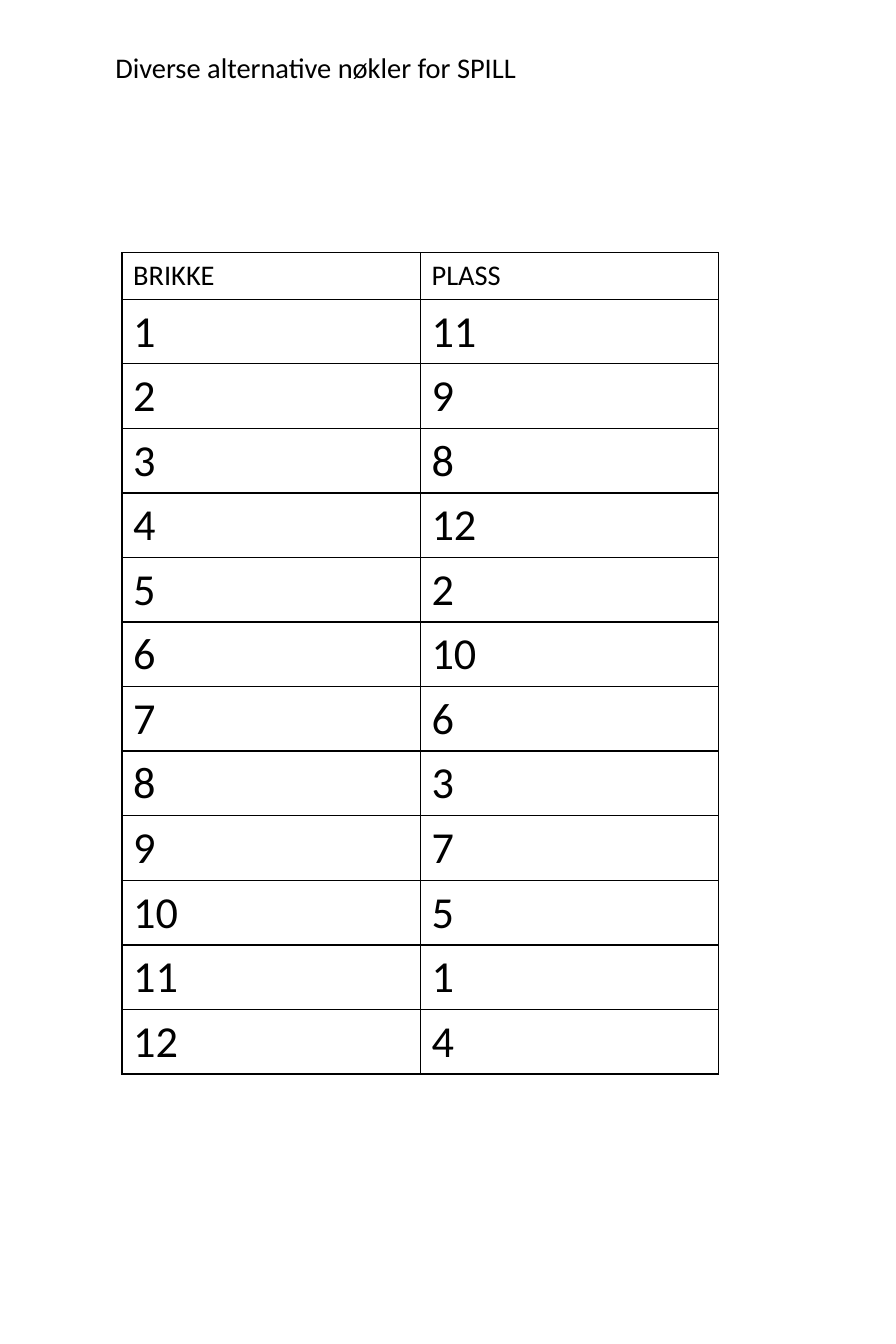
from lxml.etree import SubElement
from pptx import Presentation
from pptx.dml.color import RGBColor
from pptx.enum.text import MSO_ANCHOR, MSO_AUTO_SIZE, PP_ALIGN
from pptx.oxml.ns import qn
from pptx.util import Emu, Pt

EMU_PER_PX = 7200
BLACK = "000000"
HEADER_HEIGHT, KEY_HEIGHT = 52, 72
COLUMN_WIDTH = 333
HEADINGS = ("BRIKKE", "PLASS")
PLACES = (11, 9, 8, 12, 2, 10, 6, 3, 7, 5, 1, 4)


def px(length):
    return Emu(length * EMU_PER_PX)


def rgb(hex_color):
    return RGBColor.from_string(hex_color)


def set_attributes(target, values):
    for name, value in values.items():
        setattr(target, name, value)


def write(text_frame, text, size):
    text_frame.text = text
    paragraph = text_frame.paragraphs[0]
    paragraph.alignment = PP_ALIGN.LEFT
    font = paragraph.runs[0].font
    set_attributes(font, {"name": "Calibri", "size": Pt(size), "bold": False})
    font.color.rgb = rgb(BLACK)


def add_borders(cell):
    properties = cell._tc.get_or_add_tcPr()
    for side in ("lnL", "lnR", "lnT", "lnB"):
        border = SubElement(properties, qn(f"a:{side}"), w=str(Pt(1)))
        fill = SubElement(border, qn("a:solidFill"))
        SubElement(fill, qn("a:srgbClr"), val=BLACK)


def add_heading(slide, text):
    heading = slide.shapes.title
    set_attributes(heading, {"left": px(116), "top": px(50),
                             "width": px(756), "height": px(51)})
    write(heading.text_frame, text, 18)
    set_attributes(heading.text_frame, {
        "word_wrap": True,
        "vertical_anchor": MSO_ANCHOR.TOP,
        "auto_size": MSO_AUTO_SIZE.SHAPE_TO_FIT_TEXT,
    })


def add_key_table(slide, rows):
    columns = len(HEADINGS)
    height = HEADER_HEIGHT + KEY_HEIGHT * (len(rows) - 1)
    key_table = slide.shapes.add_table(
        len(rows), columns, px(136), px(282),
        px(COLUMN_WIDTH * columns), px(height)).table
    set_attributes(key_table, {"first_row": False, "horz_banding": False})
    for column in key_table.columns:
        column.width = px(COLUMN_WIDTH)

    for row_index, values in enumerate(rows):
        is_header = row_index == 0
        key_table.rows[row_index].height = px(HEADER_HEIGHT if is_header else KEY_HEIGHT)
        for column_index, value in enumerate(values):
            cell = key_table.cell(row_index, column_index)
            write(cell.text_frame, str(value), 18 if is_header else 28)
            add_borders(cell)
            cell.fill.background()


def main():
    presentation = Presentation()
    set_attributes(presentation, {"slide_width": px(1000), "slide_height": px(1500)})
    title_only = presentation.slide_layouts[5]
    slide = presentation.slides.add_slide(title_only)

    # Heading
    add_heading(slide, "Diverse alternative nøkler for SPILL")

    # Key: each piece number with its place
    add_key_table(slide, [HEADINGS, *enumerate(PLACES, start=1)])

    presentation.save("out.pptx")


if __name__ == "__main__":
    main()
